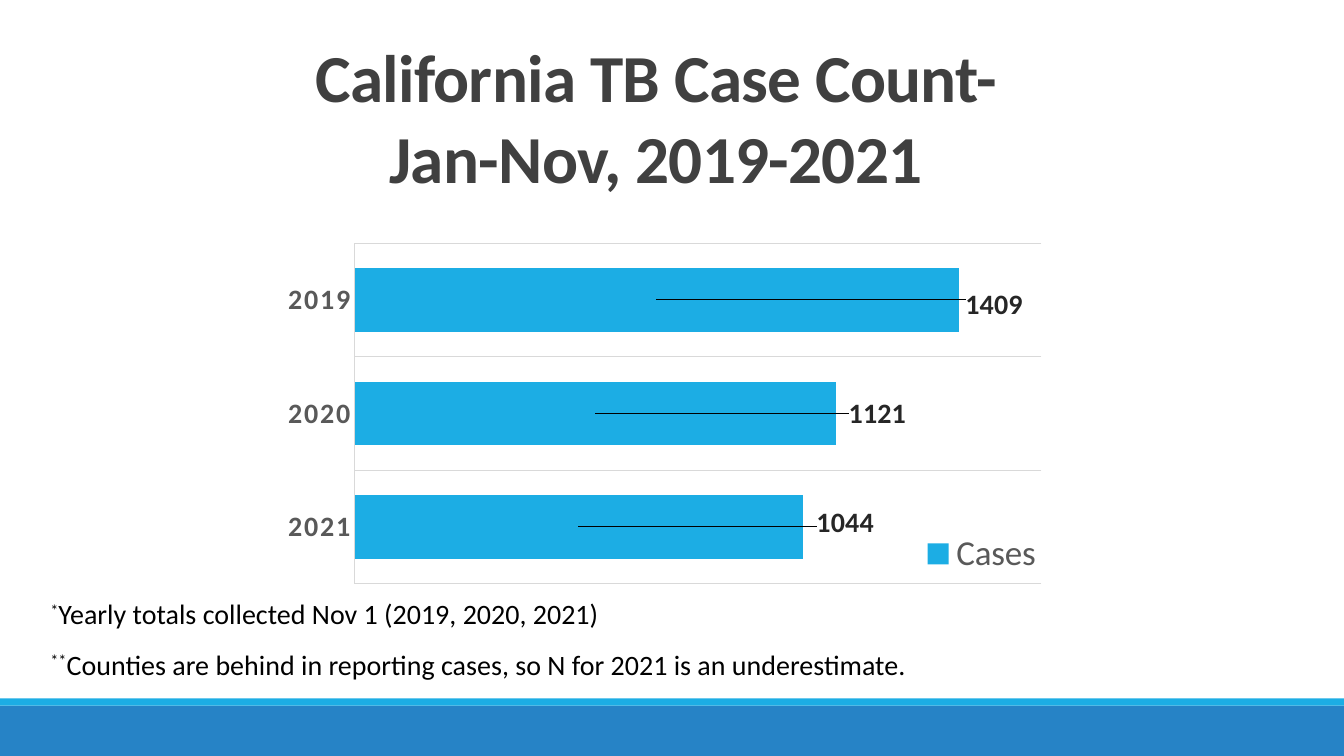
from dataclasses import dataclass

from lxml.etree import SubElement
from pptx import Presentation
from pptx.chart.data import CategoryChartData
from pptx.dml.color import RGBColor
from pptx.enum.chart import XL_CHART_TYPE as ChartType
from pptx.enum.chart import XL_LABEL_POSITION as LabelPosition
from pptx.enum.chart import XL_LEGEND_POSITION as LegendPosition
from pptx.enum.chart import XL_TICK_MARK as TickMark
from pptx.enum.shapes import MSO_SHAPE as ShapeKind
from pptx.enum.text import MSO_ANCHOR as Anchor
from pptx.enum.text import MSO_AUTO_SIZE as AutoSize
from pptx.enum.text import PP_ALIGN as Align
from pptx.oxml import parse_xml
from pptx.oxml.ns import nsdecls, qn
from pptx.util import Cm, Pt


@dataclass(frozen=True)
class Theme:
    font: str = "Calibri"
    bright: str = "1CADE4"
    deep: str = "2683C6"
    heading: str = "404040"
    axis: str = "595959"
    grid: str = "D9D9D9"
    label: str = "262626"
    black: str = "000000"
    title_size: float = 48
    body_size: float = 20
    legend_size: float = 25


def layout_xml(**values):
    """Manual chart layout, in fractions of the chart area."""
    items = "".join(f'<c:{key} val="{value}"/>' for key, value in values.items())
    return parse_xml(f'<c:layout {nsdecls("c")}><c:manualLayout>{items}'
                     "</c:manualLayout></c:layout>")


class SlideBuilder:
    def __init__(self, deck, theme):
        self.theme = theme
        self.page = deck.slides.add_slide(deck.slide_layouts[5])

    def style(self, font, size, color, bold=False):
        font.name = self.theme.font
        font.size = Pt(size)
        font.bold = bold
        font.color.rgb = RGBColor.from_string(color)

    def band(self, left, top, width, height, color):
        box = self.page.shapes.add_shape(
            ShapeKind.RECTANGLE, Cm(left), Cm(top), Cm(width), Cm(height))
        box.shadow.inherit = False
        box.fill.solid()
        box.fill.fore_color.rgb = RGBColor.from_string(color)
        box.line.fill.background()

    def title(self, lines, left, top, width, height, first_margin):
        box = self.page.shapes.title
        box.left, box.top = Cm(left), Cm(top)
        box.width, box.height = Cm(width), Cm(height)
        frame = box.text_frame
        frame.text = "\n".join(lines)
        frame.auto_size = AutoSize.NONE
        frame.vertical_anchor = Anchor.MIDDLE
        for para in frame.paragraphs:
            para.alignment = Align.CENTER
            for span in para.runs:
                self.style(span.font, self.theme.title_size, self.theme.heading, True)
                span.font._element.set("spc", "-50")
        # The first line sits slightly left of centre
        frame.paragraphs[0]._p.get_or_add_pPr().set("marR", str(Cm(first_margin)))

    def footnote(self, mark, text, left, top, width, height):
        box = self.page.shapes.add_textbox(Cm(left), Cm(top), Cm(width), Cm(height))
        box.text_frame.word_wrap = True
        para = box.text_frame.paragraphs[0]
        for words, raised in ((mark, True), (text, False)):
            span = para.add_run()
            span.text = words
            self.style(span.font, self.theme.body_size, self.theme.black)
            if raised:
                span.font._element.set("baseline", "30000")

    def bar_chart(self, name, cases, label_shifts, left, top, width, height):
        theme = self.theme
        data = CategoryChartData()
        data.categories = list(cases)
        data.add_series(name, list(cases.values()))
        chart = self.page.shapes.add_chart(
            ChartType.BAR_STACKED, Cm(left), Cm(top), Cm(width), Cm(height), data).chart
        chart.has_title = False
        self.style(chart.font, 10, theme.black)
        plot_area = chart.element.find(".//" + qn("c:plotArea"))
        for old in plot_area.findall(qn("c:layout")):
            plot_area.remove(old)
        plot_area.insert(0, layout_xml(layoutTarget="inner", xMode="edge", yMode="edge",
                                       x=0.105, y=0.171, w=0.876, h=0.81))

        # Bars
        plot = chart.plots[0]
        plot.vary_by_categories = False
        plot.gap_width, plot.overlap = 79, 100
        series = plot.series[0]
        series.format.fill.solid()
        series.format.fill.fore_color.rgb = RGBColor.from_string(theme.bright)

        # Value labels, moved from the bar centres to the bar ends
        series.data_labels.show_value = True
        for index, (across, down) in enumerate(label_shifts):
            label = series.points[index].data_label
            self.style(label.font, theme.body_size, theme.label, True)
            label.position = LabelPosition.CENTER
        for entry, (across, down) in zip(chart.element.iter(qn("c:dLbl")), label_shifts):
            entry.insert(1, layout_xml(x=across, y=down))

        # Axes
        years = chart.category_axis
        self.style(years.tick_labels.font, theme.body_size, theme.axis, True)
        years.tick_labels.font._element.set("spc", "120")
        years.major_tick_mark = TickMark.NONE
        years.has_major_gridlines = True
        for line in (years.format.line, years.major_gridlines.format.line):
            line.color.rgb = RGBColor.from_string(theme.grid)
            line.width = Pt(0.75)
        counts = chart.value_axis
        counts.minimum_scale, counts.maximum_scale = 0, 1600
        counts.has_major_gridlines = False
        counts.visible = False

        # Legend
        chart.has_legend = True
        legend = chart.legend
        legend.position = LegendPosition.TOP
        legend.include_in_layout = False
        self.style(legend.font, theme.legend_size, theme.axis)
        for old in legend._element.findall(qn("c:layout")):
            legend._element.remove(old)
        legend._element.find(qn("c:legendPos")).addnext(
            layout_xml(xMode="edge", yMode="edge", x=0.83, y=0.86, w=0.15, h=0.1))


def main():
    deck = Presentation()
    deck.slide_width, deck.slide_height = Cm(33.87), Cm(19.05)
    theme = Theme()
    slide = SlideBuilder(deck, theme)

    # Bottom bands
    slide.band(0, 17.78, 33.87, 1.27, theme.deep)
    slide.band(0, 17.6, 33.87, 0.18, theme.bright)

    # Title and footnotes
    slide.title(["California TB Case Count-", "Jan-Nov, 2019-2021"],
                0, 0.74, 33.87, 4.37, first_margin=0.8)
    slide.footnote("*", "Yearly totals collected Nov 1 (2019, 2020, 2021)",
                   1.02, 14.91, 21.6, 1.11)
    slide.footnote("**", "Counties are behind in reporting cases, "
                   "so N for 2021 is an underestimate.", 1.02, 16.18, 26.82, 1.11)

    # Case counts
    slide.bar_chart("Cases", {"2021": 1044, "2020": 1121, "2019": 1409},
                    [(0.34, -0.01), (0.36, 0.0), (0.43, 0.01)],
                    6.86, 4.32, 19.76, 10.59)
    deck.save("out.pptx")


if __name__ == "__main__":
    main()
